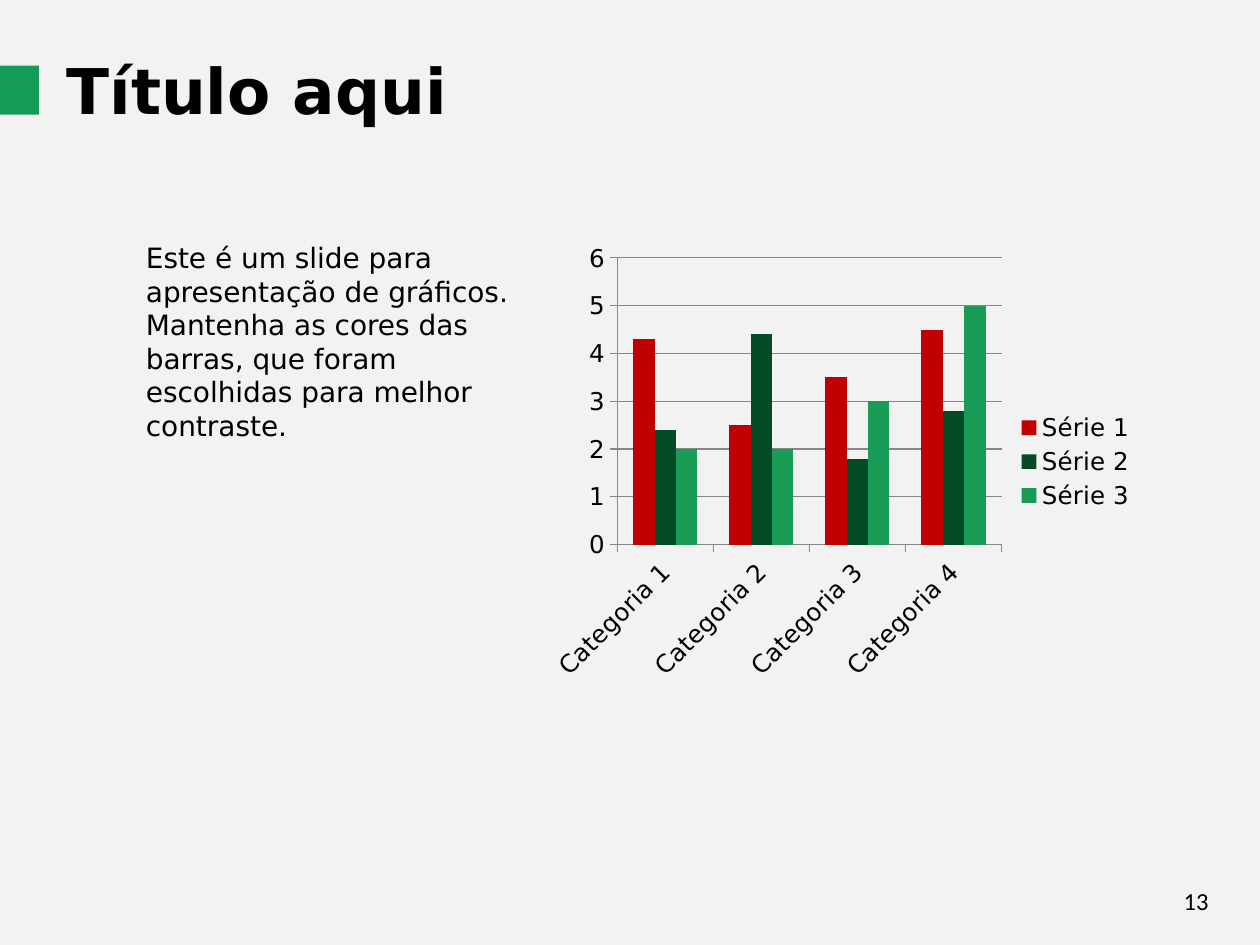
from pptx import Presentation
from pptx.chart.data import CategoryChartData as Data
from pptx.dml.color import RGBColor
from pptx.enum.chart import XL_CHART_TYPE as Kind, XL_LEGEND_POSITION as Side, XL_TICK_MARK as Tick
from pptx.enum.shapes import MSO_SHAPE as Shape
from pptx.enum.text import MSO_ANCHOR as Anchor, MSO_AUTO_SIZE as Fit, PP_ALIGN as Align
from pptx.util import Inches, Pt

BLACK = RGBColor(0x00, 0x00, 0x00)
PALE = RGBColor(0xF2, 0xF2, 0xF2)
GRAY = RGBColor(0x87, 0x87, 0x87)
RED = RGBColor(0xC0, 0x00, 0x00)
DARK = RGBColor(0x05, 0x4B, 0x28)
GREEN = RGBColor(0x19, 0x9B, 0x55)
MARK = RGBColor(0x14, 0x9B, 0x55)


class Page:
    face = "DejaVu Sans"
    ink = BLACK

    def __init__(self, slide):
        self.slide = slide
        fill = slide.background.fill
        fill.solid()
        fill.fore_color.rgb = PALE

    def style(self, font, size, face=None, bold=False):
        font.name = face or self.face
        font.size = Pt(size)
        font.bold = bold
        font.color.rgb = self.ink

    def text(self, box, words, size, face=None, bold=False,
             align=Align.LEFT, anchor=Anchor.TOP, fit=Fit.NONE):
        frame = self.slide.shapes.add_textbox(*map(Inches, box)).text_frame
        frame.word_wrap = True
        frame.auto_size = fit
        frame.vertical_anchor = anchor
        para = frame.paragraphs[0]
        para.text = words
        para.alignment = align
        self.style(para.font, size, face, bold)

    def block(self, box, color):
        shape = self.slide.shapes.add_shape(Shape.RECTANGLE, *map(Inches, box))
        shape.shadow.inherit = False
        shape.fill.solid()
        shape.fill.fore_color.rgb = color
        shape.line.fill.background()

    def columns(self, box, names, rows, size):
        data = Data()
        data.categories = names
        for name, values, _ in rows:
            data.add_series(name, values)
        chart = self.slide.shapes.add_chart(
            Kind.COLUMN_CLUSTERED, *map(Inches, box), data).chart
        self.style(chart.font, size)
        chart.has_title = False
        chart.has_legend = True
        chart.legend.position = Side.RIGHT
        chart.legend.include_in_layout = False
        self.style(chart.legend.font, size)
        for axis in (chart.category_axis, chart.value_axis):
            axis.major_tick_mark = Tick.OUTSIDE
            axis.minor_tick_mark = Tick.NONE
            axis.format.line.color.rgb = GRAY
            self.style(axis.tick_labels.font, size)
        grid = chart.value_axis.major_gridlines
        grid.format.line.color.rgb = GRAY
        plot = chart.plots[0]
        plot.gap_width = 150
        plot.vary_by_categories = False
        for series, (_, _, color) in zip(plot.series, rows):
            series.format.fill.solid()
            series.format.fill.fore_color.rgb = color


def main():
    deck = Presentation()
    deck.slide_width = Inches(10)
    deck.slide_height = Inches(7.5)
    page = Page(deck.slides.add_slide(deck.slide_layouts[6]))
    rows = [
        ("Série 1", (4.3, 2.5, 3.5, 4.5), RED),
        ("Série 2", (2.4, 4.4, 1.8, 2.8), DARK),
        ("Série 3", (2, 2, 3, 5), GREEN),
    ]
    names = [f"Categoria {n}" for n in range(1, 5)]
    page.columns((4.29, 1.86, 4.82, 3.61), names, rows, 14)
    page.text((1.06, 1.86, 3.39, 1.72),
              "Este é um slide para apresentação de gráficos. Mantenha as cores "
              "das barras, que foram escolhidas para melhor contraste.",
              16, fit=Fit.SHAPE_TO_FIT_TEXT)
    page.text((0.43, 0.36, 6.77, 0.71), "Título aqui", 36, bold=True,
              fit=Fit.SHAPE_TO_FIT_TEXT)
    page.block((-0.04, 0.52, 0.35, 0.39), MARK)
    page.text((7.17, 6.95, 2.52, 0.4), "13", 14, face="Calibri",
              align=Align.RIGHT, anchor=Anchor.MIDDLE)
    deck.save("out.pptx")


if __name__ == "__main__":
    main()
